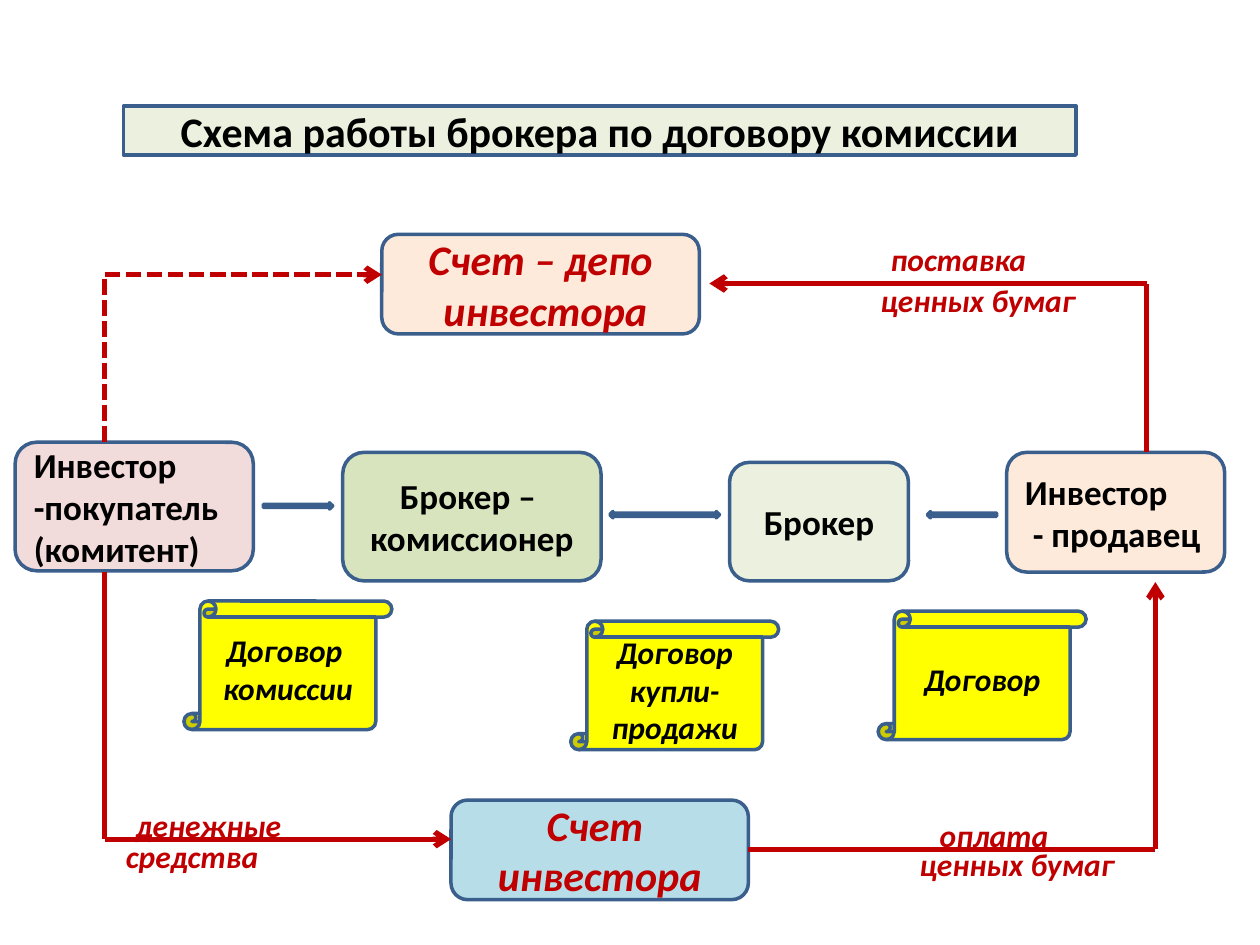
"""Build a slide showing how a broker works under a commission contract."""
from pptx import Presentation
from pptx.dml.color import RGBColor
from pptx.enum.dml import MSO_LINE
from pptx.enum.shapes import MSO_CONNECTOR, MSO_SHAPE as SHAPE
from pptx.enum.text import MSO_ANCHOR, MSO_AUTO_SIZE, PP_ALIGN as ALIGN
from pptx.oxml.ns import qn
from pptx.util import Inches, Pt
from lxml.etree import SubElement

BLACK, RED, BLUE, YELLOW = "000000", "C00000", "3A5F8C", "FFFF00"
color = RGBColor.from_string


def write(shape, lines, size=20, ink=BLACK, italic=False, align=ALIGN.CENTER,
          anchor=MSO_ANCHOR.MIDDLE):
    frame = shape.text_frame
    frame.word_wrap = True
    frame.auto_size = MSO_AUTO_SIZE.NONE
    frame.vertical_anchor = anchor
    for index, line in enumerate(lines):
        para = frame.add_paragraph() if index else frame.paragraphs[0]
        para.alignment = align
        span = para.add_run()
        span.text = line
        font = span.font
        font.name, font.size = "Calibri", Pt(size)
        font.bold, font.italic = True, italic
        font.color.rgb = color(ink)


def paint(shape, fill):
    shape.fill.solid()
    shape.fill.fore_color.rgb = color(fill)
    shape.line.color.rgb = color(BLUE)
    shape.line.width = Pt(2)
    shape.shadow.inherit = False


deck = Presentation()
deck.slide_width, deck.slide_height = Inches(10), Inches(7.5)
page = deck.slides.add_slide(deck.slide_layouts[5])
shapes = page.shapes

title = shapes.title
title.left, title.top = Inches(0.98), Inches(0.84)
title.width, title.height = Inches(7.56), Inches(0.39)
outline = SubElement(title.element.spPr, qn("a:prstGeom"), prst="roundRect")
SubElement(outline, qn("a:avLst"))
paint(title, "EBF1DE")
write(title, ["Схема работы брокера по договору комиссии"], size=24)

participants = [
    (0.12, 3.51, 1.89, 1.02, "F2DCDB", ["Инвестор", "-покупатель (комитент)"], ALIGN.LEFT),
    (2.72, 3.59, 2.05, 1.02, "D7E4BD", ["Брокер – ", "комиссионер"], ALIGN.CENTER),
    (5.79, 3.67, 1.42, 0.94, "EBF1DE", ["Брокер"], ALIGN.CENTER),
    (7.99, 3.59, 1.73, 0.95, "FDEADA", ["Инвестор", " - продавец"], ALIGN.LEFT),
]
for left, top, width, height, fill, lines, align in participants:
    box = shapes.add_shape(SHAPE.ROUNDED_RECTANGLE, Inches(left), Inches(top),
                           Inches(width), Inches(height))
    paint(box, fill)
    write(box, lines, align=align)

arrows = [
    (SHAPE.RIGHT_ARROW, 2.09, 3.99, 0.55),
    (SHAPE.LEFT_ARROW, 7.36, 4.06, 0.55),
    (SHAPE.LEFT_RIGHT_ARROW, 4.84, 4.06, 0.87),
]
for kind, left, top, width in arrows:
    arrow = shapes.add_shape(kind, Inches(left), Inches(top), Inches(width), Inches(0.05))
    paint(arrow, "4F81BD")

contracts = [
    (1.46, 4.77, ["Договор ", "комиссии"]),
    (4.53, 4.93, ["Договор купли-продажи"]),
    (6.97, 4.85, ["Договор"]),
]
for left, top, lines in contracts:
    scroll = shapes.add_shape(SHAPE.VERTICAL_SCROLL, Inches(left), Inches(top),
                              Inches(1.65), Inches(1.02))
    paint(scroll, YELLOW)
    write(scroll, lines, size=18, italic=True)

accounts = [
    (3.03, 1.86, 2.52, "FDEADA", ["Счет – депо", " инвестора"]),
    (3.58, 6.35, 2.36, "B7DEE8", ["Счет ", "инвестора"]),
]
for left, top, width, fill, lines in accounts:
    account = shapes.add_shape(SHAPE.ROUNDED_RECTANGLE, Inches(left), Inches(top),
                               Inches(width), Inches(0.79))
    paint(account, fill)
    write(account, lines, size=24, ink=RED, italic=True)

flows = [
    ([(0.83, 4.54), (0.83, 6.66), (3.58, 6.66)], False),
    ([(5.94, 6.74), (9.17, 6.74), (9.17, 4.62)], False),
    ([(9.1, 3.59), (9.1, 2.25), (5.63, 2.25)], False),
    ([(0.83, 3.51), (0.83, 2.18), (3.03, 2.18)], True),
]
for points, dashed in flows:
    for start, end in zip(points, points[1:]):
        line = shapes.add_connector(MSO_CONNECTOR.STRAIGHT,
                                    *(Inches(value) for value in start + end))
        line.line.color.rgb = color(RED)
        line.line.width = Pt(3)
        if dashed:
            line.line.dash_style = MSO_LINE.SQUARE_DOT
        if end == points[-1]:
            SubElement(line.line._get_or_add_ln(), qn("a:tailEnd"), type="arrow")
        SubElement(line.element.spPr, qn("a:effectLst"))

labels = [
    (0.98, 6.35, 1.42, "денежные"),
    (0.9, 6.59, 1.42, "средства"),
    (7.36, 6.43, 1.42, "оплата"),
    (7.2, 6.66, 1.97, "ценных бумаг"),
    (6.89, 2.18, 1.97, "ценных бумаг"),
    (6.97, 1.86, 1.97, "поставка"),
]
for left, top, width, text in labels:
    label = shapes.add_textbox(Inches(left), Inches(top), Inches(width), Inches(0.4))
    write(label, [text], size=18, ink=RED, italic=True, align=ALIGN.LEFT,
          anchor=MSO_ANCHOR.TOP)

deck.save("out.pptx")
